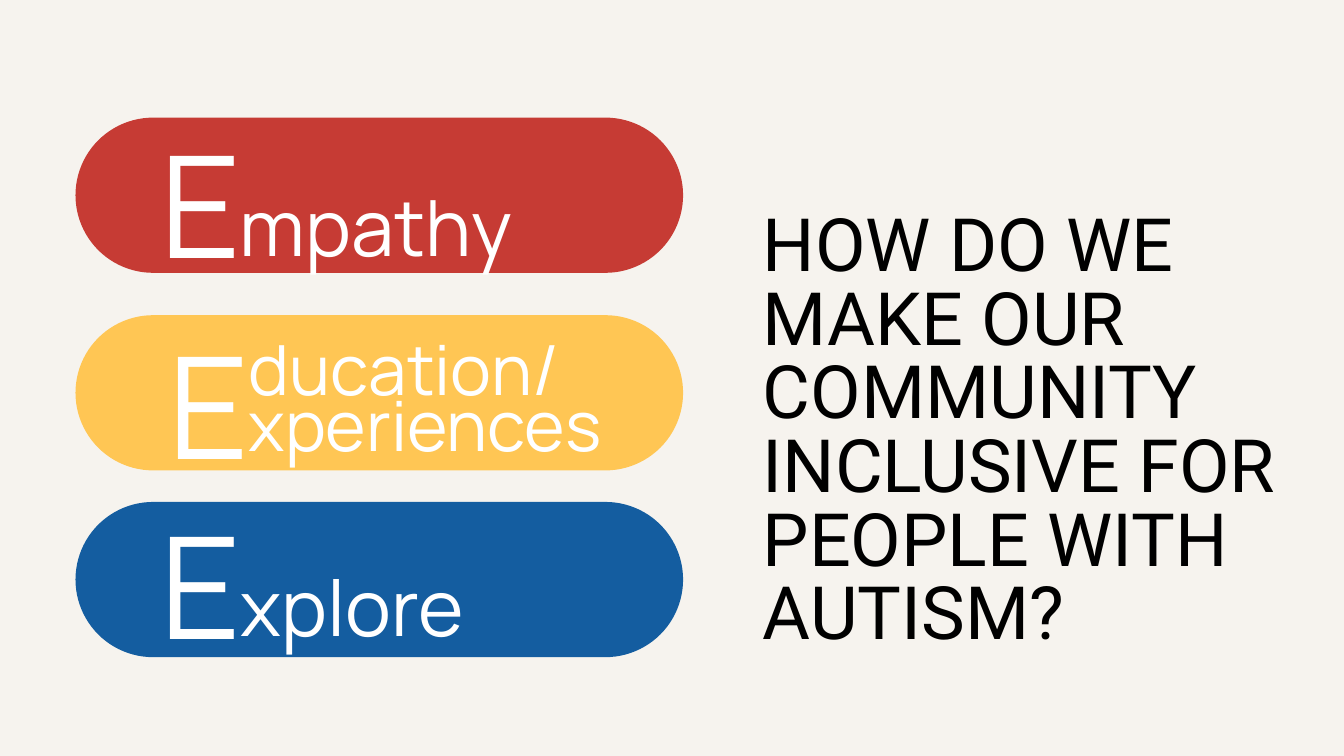
from dataclasses import dataclass

from pptx import Presentation
from pptx.dml.color import RGBColor
from pptx.enum.shapes import MSO_SHAPE as Shape
from pptx.enum.text import MSO_AUTO_SIZE as AutoSize
from pptx.slide import Slide
from pptx.util import Pt

COLOURS = {
    "cream": "F6F3EE",
    "red": "C63B34",
    "yellow": "FFC654",
    "blue": "145DA0",
    "white": "FFFFFF",
    "black": "000000",
}
PILL_LEFT, PILL_WIDTH, PILL_HEIGHT = 80.9, 651, 166.3
INITIAL_WIDTH, INITIAL_HEIGHT = 154, 204.5
ENDING_WIDTH = 483


@dataclass(frozen=True)
class Lettering:
    font: str
    size: float
    spacing: float
    colour: str


@dataclass(frozen=True)
class Pill:
    colour: str
    top: float
    initial_at: tuple[float, float]
    ending: str
    ending_at: tuple[float, float]
    ending_height: float
    ending_style: Lettering


QUESTION = Lettering("Roboto", 78.8, 78.8, "black")
INITIAL = Lettering("Manrope", 152, 197.6, "white")
ENDING = Lettering("Manrope", 83.1, 108, "white")
STACKED = Lettering("Manrope", 74.1, 60, "white")

PILLS = [
    Pill("red", 126, (172.1, 110.2), "mpathy", (257, 183.6), 110, ENDING),
    Pill("yellow", 337.7, (180, 324.7), "ducation/\nxperiences",
         (266.4, 378.7), 134, STACKED),
    Pill("blue", 537.8, (172.1, 518.4), "xplore", (257.8, 590.4), 110, ENDING),
]


def rgb(name: str) -> RGBColor:
    return RGBColor.from_string(COLOURS[name])


def add_lettering(slide: Slide, wording: str, at: tuple[float, float],
                  width: float, height: float, style: Lettering) -> None:
    box = slide.shapes.add_textbox(*map(Pt, (*at, width, height)))
    frame = box.text_frame
    frame_format = {
        "word_wrap": True,
        "auto_size": AutoSize.NONE,
        "margin_left": 0,
        "margin_top": 0,
        "margin_right": 0,
        "margin_bottom": 0,
    }
    for attribute, value in frame_format.items():
        setattr(frame, attribute, value)
    frame.text = wording
    font_format = {"name": style.font, "size": Pt(style.size)}
    for paragraph in frame.paragraphs:
        paragraph.line_spacing = Pt(style.spacing)
        for run in paragraph.runs:
            for attribute, value in font_format.items():
                setattr(run.font, attribute, value)
            run.font.color.rgb = rgb(style.colour)


def add_pill(slide: Slide, pill: Pill) -> None:
    capsule = slide.shapes.add_shape(
        Shape.ROUNDED_RECTANGLE,
        *map(Pt, (PILL_LEFT, pill.top, PILL_WIDTH, PILL_HEIGHT)))
    capsule.adjustments[0] = 0.5
    capsule.shadow.inherit = False
    capsule.fill.solid()
    capsule.fill.fore_color.rgb = rgb(pill.colour)
    capsule.line.fill.background()
    add_lettering(slide, pill.ending, pill.ending_at, ENDING_WIDTH,
                  pill.ending_height, pill.ending_style)
    add_lettering(slide, "E", pill.initial_at, INITIAL_WIDTH,
                  INITIAL_HEIGHT, INITIAL)


def main() -> None:
    """Build the slide on empathy, education and exploring."""
    deck = Presentation()
    deck.slide_width, deck.slide_height = Pt(1440), Pt(810)
    slide = deck.slides.add_slide(deck.slide_layouts[6])
    slide.background.fill.solid()
    slide.background.fill.fore_color.rgb = rgb("cream")
    add_lettering(
        slide,
        "HOW DO WE MAKE OUR COMMUNITY INCLUSIVE FOR PEOPLE WITH AUTISM?",
        (817.2, 228.2), 568, 397.4, QUESTION)
    for pill in PILLS:
        add_pill(slide, pill)
    deck.save("out.pptx")


if __name__ == "__main__":
    main()
